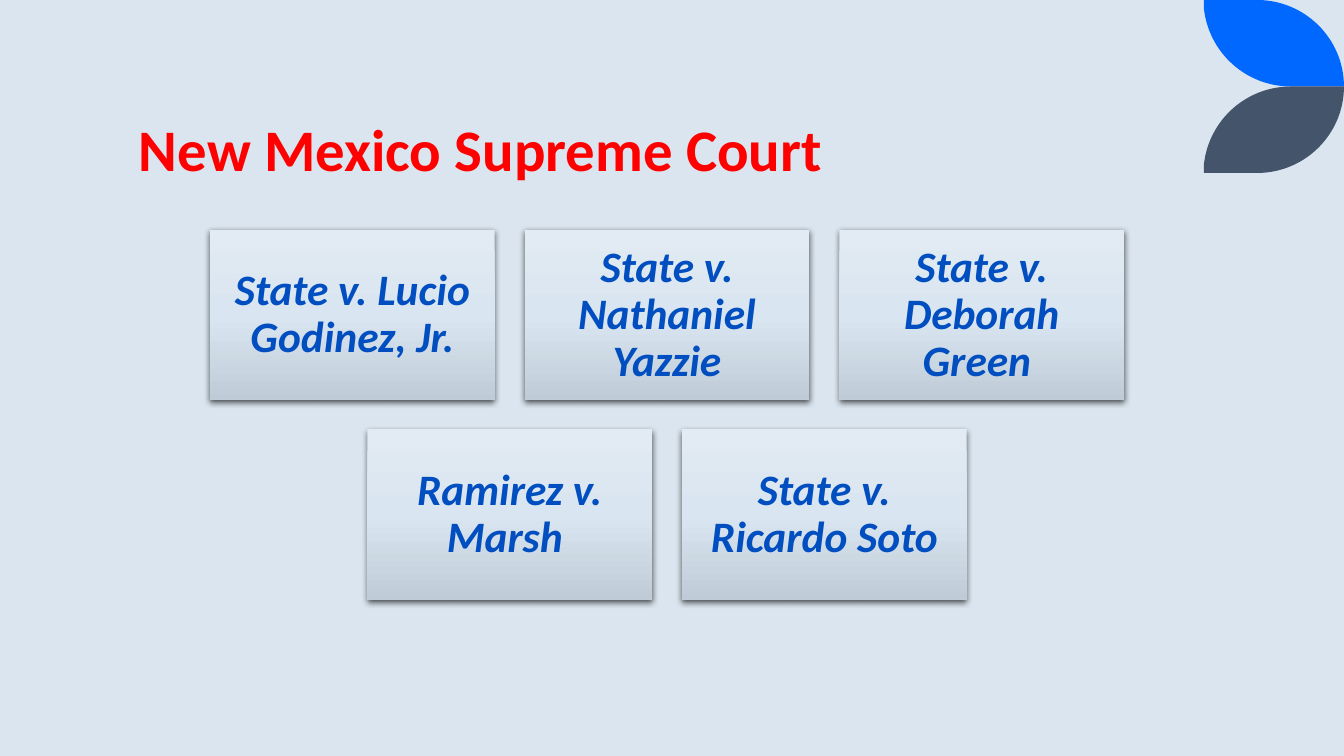
from pptx import Presentation
from pptx.dml.color import RGBColor
from pptx.enum.shapes import MSO_SHAPE as Shape
from pptx.enum.text import MSO_ANCHOR as Anchor, PP_ALIGN as Align
from pptx.oxml import parse_xml
from pptx.util import Pt

PX = 914400 / 100.8
NAMESPACE = 'xmlns:a="http://schemas.openxmlformats.org/drawingml/2006/main"'
LEAF_SIZE = (140, 87)
LEAF_OUTLINE = [
    ("moveTo", [(0, 0)]),
    ("lnTo", [(53, 0)]),
    ("cubicBezTo", [(101, 0), (140, 39), (140, 87)]),
    ("lnTo", [(87, 87)]),
    ("cubicBezTo", [(42, 87), (5, 53), (0, 9)]),
]
CARD_STOPS = [(0, "E2EBF3"), (50, "D9E5F0"), (100, "BFCCD7")]
CASE_ROWS = [
    ["State v. Lucio Godinez, Jr.", "State v. Nathaniel Yazzie", "State v. Deborah Green "],
    ["Ramirez v. Marsh ", "State v. Ricardo Soto"],
]


def px(length):
    return round(length * PX)


def color(value):
    return RGBColor.from_string(value)


def write_text(shape, text, size, text_color, anchor, align, spacing, inset, italic=False):
    frame = shape.text_frame
    frame.word_wrap = True
    frame.vertical_anchor = anchor
    frame.margin_left = frame.margin_right = px(inset[0])
    frame.margin_top = frame.margin_bottom = px(inset[1])
    paragraph = frame.paragraphs[0]
    paragraph.text = text
    paragraph.alignment = align
    paragraph.line_spacing = spacing
    font = paragraph.font
    font.name = "Calibri"
    font.size = Pt(size)
    font.bold = True
    font.italic = italic
    font.color.rgb = color(text_color)


def add_title(slide, left, top, width, height):
    box = slide.shapes.add_textbox(px(left), px(top), px(width), px(height))
    write_text(box, "New Mexico Supreme Court", 42, "FF0000",
               Anchor.BOTTOM, Align.LEFT, 0.8, (10, 5))


def leaf_path(flipped):
    width, height = LEAF_SIZE
    segments = ""
    for command, points in LEAF_OUTLINE:
        marks = "".join(
            f'<a:pt x="{x}" y="{height - y if flipped else y}"/>' for x, y in points
        )
        segments += f"<a:{command}>{marks}</a:{command}>"
    return parse_xml(
        f'<a:path {NAMESPACE} w="{width}" h="{height}">{segments}<a:close/></a:path>'
    )


def add_leaf(slide, left, top, width, height, fill, flipped=False):
    builder = slide.shapes.build_freeform(px(left), px(top))
    right, bottom = px(left + width), px(top + height)
    builder.add_line_segments([(right, px(top)), (right, bottom), (px(left), bottom)])
    leaf = builder.convert_to_shape()
    paths = leaf._element.spPr.find("{*}custGeom/{*}pathLst")
    paths.replace(paths[0], leaf_path(flipped))
    leaf.shadow.inherit = False
    leaf.fill.solid()
    leaf.fill.fore_color.rgb = color(fill)
    leaf.line.fill.background()


def add_corner_leaves(slide, left, top, width, height):
    half = height / 2
    add_leaf(slide, left, top, width, half, "0068FF")
    add_leaf(slide, left, top + half, width, half, "44546A", flipped=True)


def style_card(card):
    card.line.fill.background()
    outline = card._element.spPr.find("{*}ln")
    stops = "".join(
        f'<a:gs pos="{position * 1000}"><a:srgbClr val="{value}"/></a:gs>'
        for position, value in CARD_STOPS
    )
    outline.addprevious(parse_xml(
        f'<a:gradFill {NAMESPACE} rotWithShape="1"><a:gsLst>{stops}</a:gsLst>'
        '<a:lin ang="5400000" scaled="0"/></a:gradFill>'
    ))
    outline.addnext(parse_xml(
        f'<a:effectLst {NAMESPACE}><a:outerShdw blurRad="{Pt(4.5)}" dist="{Pt(1.5)}" '
        'dir="5400000" algn="ctr" rotWithShape="0"><a:srgbClr val="000000">'
        '<a:alpha val="63000"/></a:srgbClr></a:outerShdw></a:effectLst>'
    ))


def add_case_cards(slide, left, top, width, height):
    column_gap, row_gap = 30, 29
    card_width = (width - 2 * column_gap) / 3
    card_height = (height - row_gap) / 2
    for row, cases in enumerate(CASE_ROWS):
        row_width = len(cases) * (card_width + column_gap) - column_gap
        row_left = left + (width - row_width) / 2
        for column, case in enumerate(cases):
            card = slide.shapes.add_shape(
                Shape.RECTANGLE,
                px(row_left + column * (card_width + column_gap)),
                px(top + row * (card_height + row_gap)),
                px(card_width), px(card_height),
            )
            style_card(card)
            write_text(card, case, 31, "004EBF", Anchor.MIDDLE, Align.CENTER,
                       0.9, (13, 13), italic=True)


def main():
    presentation = Presentation()
    presentation.slide_width = px(1344)
    presentation.slide_height = px(756)
    slide = presentation.slides.add_slide(presentation.slide_layouts[6])
    background = slide.background.fill
    background.solid()
    background.fore_color.rgb = color("DAE5EF")
    add_corner_leaves(slide, 1204, 0, 140, 173)
    add_title(slide, 129, 15, 1078, 173)
    add_case_cards(slide, 210, 230, 914, 370)
    presentation.save("out.pptx")


if __name__ == "__main__":
    main()
